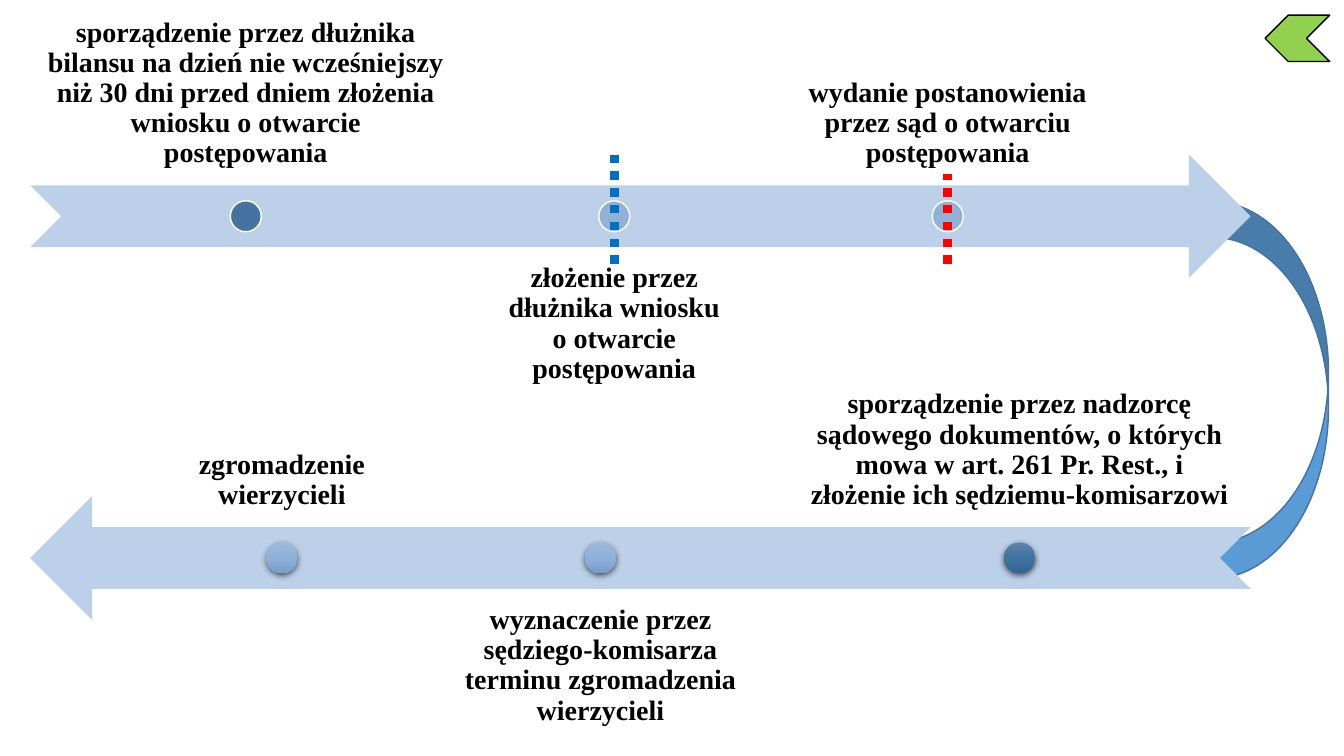
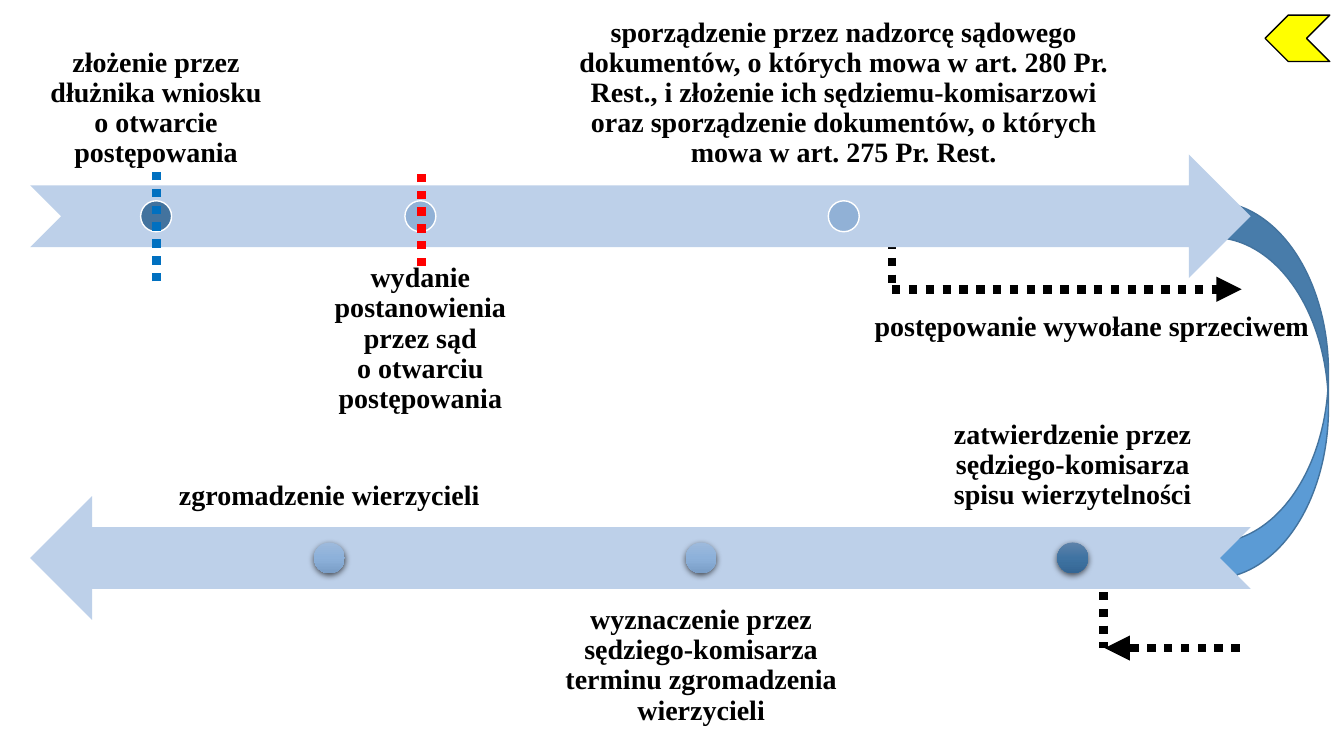
import dataclasses

import pptx
import pptx.dml.color
import pptx.enum.dml
import pptx.enum.shapes
import pptx.enum.text
import pptx.oxml
import pptx.oxml.ns
import pptx.util

Cm = pptx.util.Cm
Pt = pptx.util.Pt
RGBColor = pptx.dml.color.RGBColor
SHAPE = pptx.enum.shapes.MSO_SHAPE
ANCHOR = pptx.enum.text.MSO_ANCHOR
qn = pptx.oxml.ns.qn

BLACK = RGBColor(0x00, 0x00, 0x00)
WHITE = RGBColor(0xFF, 0xFF, 0xFF)
BAND_BLUE = RGBColor(0xBD, 0xD0, 0xE9)
TURN_BLUE = RGBColor(0x5B, 0x9B, 0xD5)
DARK_BLUE = RGBColor(0x43, 0x73, 0x9E)
DOT_BLUE = RGBColor(0x91, 0xB1, 0xD6)
FILING_BLUE = RGBColor(0x00, 0x70, 0xC0)
RULING_RED = RGBColor(0xFF, 0x00, 0x00)
GREEN = RGBColor(0x92, 0xD0, 0x50)
YELLOW = RGBColor(0xFF, 0xFF, 0x00)
DARK_GRADIENT = [RGBColor(0x5F, 0x83, 0xAA), RGBColor(0x3F, 0x73, 0xA2), RGBColor(0x34, 0x66, 0x94)]
LIGHT_GRADIENT = [RGBColor(0x9E, 0xBA, 0xDC), RGBColor(0x8D, 0xB1, 0xDA), RGBColor(0x79, 0x9D, 0xC6)]

FONT = "Times New Roman"
BAND_LEFT, BAND_WIDTH, BAND_HEIGHT = 0.76, 30.76, 3.12
UPPER_BAND, LOWER_BAND = 3.89, 12.5
LABEL_OFFSET = 2.34
LABEL_INSET = 0.41
DOT_SIZE = 0.78


@dataclasses.dataclass
class Event:
    text: str
    left: float
    width: float


@dataclasses.dataclass
class DottedLine:
    start: tuple
    end: tuple
    color: RGBColor = BLACK
    arrow: bool = False


def add_figure(slide, kind, left, top, width, height, fill=None, line=None):
    figure = slide.shapes.add_shape(kind, Cm(left), Cm(top), Cm(width), Cm(height))
    figure.shadow.inherit = False
    if fill is not None:
        figure.fill.solid()
        figure.fill.fore_color.rgb = fill
    if line is None:
        figure.line.fill.background()
    else:
        figure.line.color.rgb = line
        figure.line.width = Pt(1)
    return figure


def add_label(slide, text, left, top, width, height, anchor, inset=None):
    label = slide.shapes.add_textbox(Cm(left), Cm(top), Cm(width), Cm(height))
    frame = label.text_frame
    frame.word_wrap = True
    frame.vertical_anchor = anchor
    if inset is not None:
        frame.margin_left = frame.margin_right = Cm(inset)
        frame.margin_top = frame.margin_bottom = Cm(inset)
    frame.text = text
    paragraph = frame.paragraphs[0]
    paragraph.alignment = pptx.enum.text.PP_ALIGN.CENTER
    paragraph.line_spacing = 0.9
    paragraph.font.name = FONT
    paragraph.font.size = Pt(20)
    paragraph.font.bold = True
    paragraph.font.color.rgb = BLACK


def add_dotted_line(slide, dotted):
    x1, y1 = dotted.start
    x2, y2 = dotted.end
    connector = slide.shapes.add_connector(
        pptx.enum.shapes.MSO_CONNECTOR.STRAIGHT, Cm(x1), Cm(y1), Cm(x2), Cm(y2))
    connector.line.color.rgb = dotted.color
    connector.line.width = Pt(6)
    connector.line.dash_style = pptx.enum.dml.MSO_LINE.ROUND_DOT
    properties = connector.element.spPr
    if dotted.arrow:
        tail = pptx.oxml.ns.nsdecls("a")
        properties.find(qn("a:ln")).append(
            pptx.oxml.parse_xml(f'<a:tailEnd {tail} type="triangle"/>'))
    properties.append(properties.makeelement(qn("a:effectLst"), {}))


def shade_dot(dot, colors):
    """Give a dot a three-stop vertical gradient and a soft shadow below it."""
    namespace = pptx.oxml.ns.nsdecls("a")
    dot.fill.gradient()
    dot.fill.gradient_angle = 270
    properties = dot.element.spPr
    stops = properties.find(qn("a:gradFill")).find(qn("a:gsLst"))
    for stop in list(stops):
        stops.remove(stop)
    for index, color in enumerate(colors):
        stops.append(pptx.oxml.parse_xml(
            f'<a:gs {namespace} pos="{index * 50000}"><a:srgbClr val="{color}"/></a:gs>'))
    properties.find(qn("a:effectLst")).append(pptx.oxml.parse_xml(
        f'<a:outerShdw {namespace} blurRad="{Pt(4.5)}" dist="{Pt(1.5)}" dir="5400000" '
        'algn="ctr" rotWithShape="0"><a:srgbClr val="000000"><a:alpha val="63000"/>'
        '</a:srgbClr></a:outerShdw>'))


def add_timeline(slide, top, events, leftward=False):
    """Draw a band with its events; labels alternate above and below it."""
    band = add_figure(slide, SHAPE.NOTCHED_RIGHT_ARROW, BAND_LEFT, top,
                      BAND_WIDTH, BAND_HEIGHT, BAND_BLUE)
    band.rotation = 180 if leftward else 0
    for index, event in enumerate(events):
        below = index % 2 == 1
        add_label(slide, event.text, event.left,
                  top + (LABEL_OFFSET if below else -LABEL_OFFSET), event.width, BAND_HEIGHT,
                  ANCHOR.TOP if below else ANCHOR.BOTTOM, LABEL_INSET)
        dot_place = (event.left + (event.width - DOT_SIZE) / 2,
                     top + (BAND_HEIGHT - DOT_SIZE) / 2, DOT_SIZE, DOT_SIZE)
        first = index == 0
        if leftward:
            dot = add_figure(slide, SHAPE.OVAL, *dot_place)
            shade_dot(dot, DARK_GRADIENT if first else LIGHT_GRADIENT)
        else:
            add_figure(slide, SHAPE.OVAL, *dot_place, DARK_BLUE if first else DOT_BLUE, WHITE)


def add_process_slide(deck, chevron_color, upper, lower, markers, branches=()):
    """Branches run behind the bands, markers in front of them."""
    slide = deck.slides.add_slide(deck.slide_layouts[6])
    turn = add_figure(slide, SHAPE.CURVED_LEFT_ARROW, 30.56, 5.08, 2.92, 9.78,
                      TURN_BLUE, DARK_BLUE)
    for index, value in enumerate((0.31, 0.5, 0.21)):
        turn.adjustments[index] = value
    chevron = add_figure(slide, SHAPE.CHEVRON, 31.88, 0.38, 1.63, 1.17, chevron_color, BLACK)
    chevron.rotation = 180
    for branch in branches:
        add_dotted_line(slide, branch)
    add_timeline(slide, UPPER_BAND, upper)
    add_timeline(slide, LOWER_BAND, lower, leftward=True)
    for marker in markers:
        add_dotted_line(slide, marker)
    return slide


def main():
    deck = pptx.Presentation()
    deck.slide_width, deck.slide_height = Cm(33.87), Cm(19.05)
    hearing_date = "wyznaczenie przez sędziego-komisarza terminu zgromadzenia wierzycieli"
    meeting = "zgromadzenie wierzycieli"

    add_process_slide(
        deck, GREEN,
        upper=[
            Event("sporządzenie przez dłużnika bilansu na dzień nie wcześniejszy niż 30 dni "
                  "przed dniem złożenia wniosku o otwarcie postępowania", 0.76, 10.87),
            Event("złożenie przez dłużnika wniosku\vo otwarcie postępowania", 11.96, 7.04),
            Event("wydanie postanowienia przez sąd o otwarciu postępowania", 19.35, 9.07),
        ],
        lower=[
            Event("sporządzenie przez nadzorcę sądowego dokumentów, o których mowa w art. 261 "
                  "Pr. Rest., i złożenie ich sędziemu-komisarzowi", 19.89, 11.61),
            Event(hearing_date, 10.69, 8.89),
            Event(meeting, 3.84, 6.53),
        ],
        markers=[
            DottedLine((15.49, 6.65), (15.49, 3.91), FILING_BLUE),
            DottedLine((23.88, 6.65), (23.88, 4.39), RULING_RED),
        ])

    objection_slide = add_process_slide(
        deck, YELLOW,
        upper=[
            Event("złożenie przez dłużnika wniosku o otwarcie postępowania", 0.76, 6.35),
            Event("wydanie postanowienia przez sąd\vo otwarciu postępowania", 7.42, 6.35),
            Event("sporządzenie przez nadzorcę sądowego dokumentów, o których mowa w art. 280 "
                  "Pr. Rest., i złożenie ich sędziemu-komisarzowi oraz sporządzenie "
                  "dokumentów, o których mowa w art. 275 Pr. Rest.", 14.1, 14.33),
        ],
        lower=[
            Event("zatwierdzenie przez sędziego-komisarza spisu wierzytelności", 22.96, 8.15),
            Event(hearing_date, 13.21, 8.92),
            Event(meeting, 3.84, 8.92),
        ],
        markers=[
            DottedLine((3.94, 7.09), (3.94, 4.29), FILING_BLUE),
            DottedLine((10.62, 6.71), (10.62, 4.29), RULING_RED),
        ],
        branches=[
            DottedLine((22.48, 4.8), (22.48, 7.29)),
            DottedLine((22.48, 7.29), (31.29, 7.29), arrow=True),
            DottedLine((27.81, 14.07), (27.81, 16.33)),
            DottedLine((31.24, 16.33), (27.84, 16.33), arrow=True),
        ])
    add_label(objection_slide, "postępowanie wywołane sprzeciwem",
              21.22, 7.75, 12.6, 1.12, ANCHOR.TOP)

    deck.save("out.pptx")


if __name__ == "__main__":
    main()
